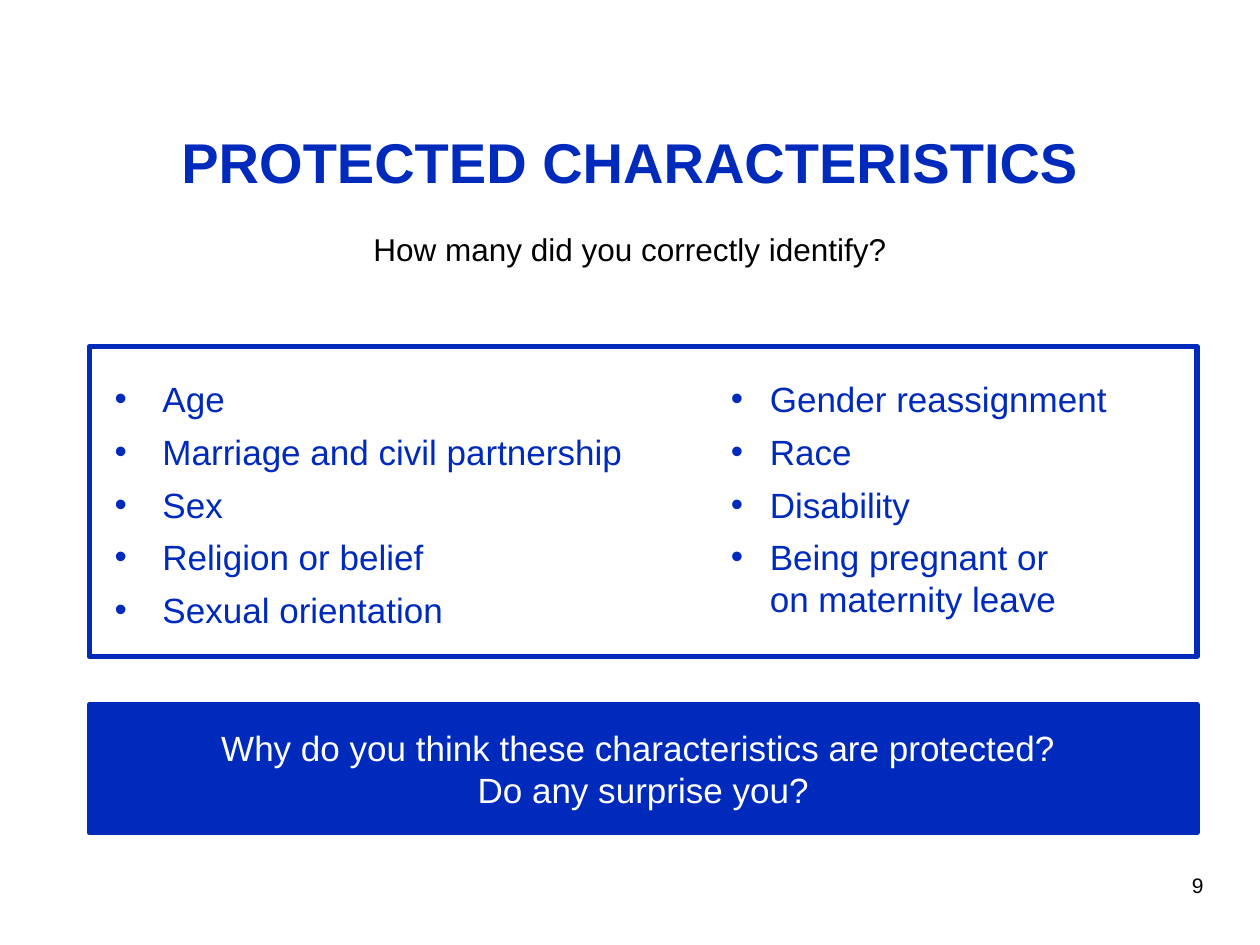
from lxml import etree
from pptx import Presentation
from pptx.dml.color import RGBColor
from pptx.enum.shapes import MSO_SHAPE
from pptx.enum.text import MSO_ANCHOR, PP_ALIGN
from pptx.oxml.ns import qn
from pptx.util import Inches, Pt

BLUE = RGBColor(0x00, 0x2A, 0xBB)
BLACK = RGBColor(0x00, 0x00, 0x00)
WHITE = RGBColor(0xFF, 0xFF, 0xFF)
RECTANGLE = MSO_SHAPE.RECTANGLE
TOP, MIDDLE = MSO_ANCHOR.TOP, MSO_ANCHOR.MIDDLE
LEFT, CENTER = PP_ALIGN.LEFT, PP_ALIGN.CENTER

PANEL_LEFT, PANEL_WIDTH = 0.71, 8.79
LIST_TOP, LIST_HEIGHT = 3.0, 2.1
LISTS = [
    (0.91, 4.6, 0.38, ["Age", "Marriage and civil partnership", "Sex",
                       "Religion or belief", "Sexual orientation"]),
    (5.8, 3.5, 0.31, ["Gender reassignment", "Race", "Disability",
                      "Being pregnant or\von maternity leave"]),
]
BODY = {"size": Pt(20), "color": BLUE}
BODY_SPACING = {"line_spacing": Pt(24)}


def set_attributes(target, values):
    """Set each named value on the target."""
    for name, value in values.items():
        setattr(target, name, value)


def add_bullet(paragraph, indent):
    """Give a paragraph a round bullet with a hanging indent."""
    properties = paragraph._p.get_or_add_pPr()
    properties.set("marL", str(Inches(indent)))
    properties.set("indent", str(-Inches(indent)))
    font = etree.SubElement(properties, qn("a:buFont"))
    font.set("typeface", "Arial")
    bullet = etree.SubElement(properties, qn("a:buChar"))
    bullet.set("char", "•")


def write_lines(frame, lines, font, spacing=None, align=CENTER,
                anchor=MIDDLE, margin=0.05, indent=None):
    """Fill a text frame with one paragraph per line."""
    set_attributes(frame, {
        "word_wrap": True, "vertical_anchor": anchor,
        "margin_left": Inches(margin), "margin_right": Inches(margin),
        "margin_top": Inches(margin), "margin_bottom": Inches(margin),
    })
    font_values = {"name": "Arial", **font}
    color = font_values.pop("color")
    for index, line in enumerate(lines):
        paragraph = frame.add_paragraph() if index else frame.paragraphs[0]
        paragraph.text = line
        if indent is not None:
            add_bullet(paragraph, indent)
        set_attributes(paragraph, {"alignment": align, **(spacing or {})})
        for run in paragraph.runs:
            set_attributes(run.font, font_values)
            run.font.color.rgb = color


def add_text(slide, left, top, width, height, lines, font, **layout):
    """Add a text box."""
    box = slide.shapes.add_textbox(
        Inches(left), Inches(top), Inches(width), Inches(height))
    write_lines(box.text_frame, lines, font, **layout)


def add_panel(slide, top, height, fill=None):
    """Add a blue-edged rectangle across the content width."""
    panel = slide.shapes.add_shape(
        RECTANGLE, Inches(PANEL_LEFT), Inches(top),
        Inches(PANEL_WIDTH), Inches(height))
    panel.shadow.inherit = False
    if fill is None:
        panel.fill.background()
    else:
        panel.fill.solid()
        panel.fill.fore_color.rgb = fill
    panel.line.color.rgb = BLUE
    panel.line.width = Pt(3)
    return panel


def main():
    """Build the protected characteristics slide."""
    presentation = Presentation()
    presentation.slide_width = Inches(10)
    presentation.slide_height = Inches(7.5)
    slide = presentation.slides.add_slide(presentation.slide_layouts[6])

    add_text(slide, 0.5, 0.89, 9, 0.77, ["PROTECTED CHARACTERISTICS"],
             {"size": Pt(32), "bold": True, "color": BLUE})
    add_text(slide, 0.5, 1.78, 9, 0.93, ["How many did you correctly identify?"],
             {"size": Pt(18), "color": BLACK}, anchor=TOP)
    add_text(slide, 9.02, 6.75, 0.97, 0.55, ["9"],
             {"size": Pt(12), "color": BLACK})

    add_panel(slide, 2.75, 2.46)
    for left, width, indent, characteristics in LISTS:
        add_text(slide, left, LIST_TOP, width, LIST_HEIGHT, characteristics,
                 BODY, spacing={**BODY_SPACING, "space_after": Pt(6)},
                 align=LEFT, anchor=TOP, margin=0, indent=indent)

    question = add_panel(slide, 5.59, 1.02, BLUE)
    write_lines(question.text_frame,
                ["Why do you think these characteristics are protected? ",
                 "Do any surprise you?"],
                {**BODY, "color": WHITE}, spacing=BODY_SPACING)

    presentation.save("out.pptx")


if __name__ == "__main__":
    main()
